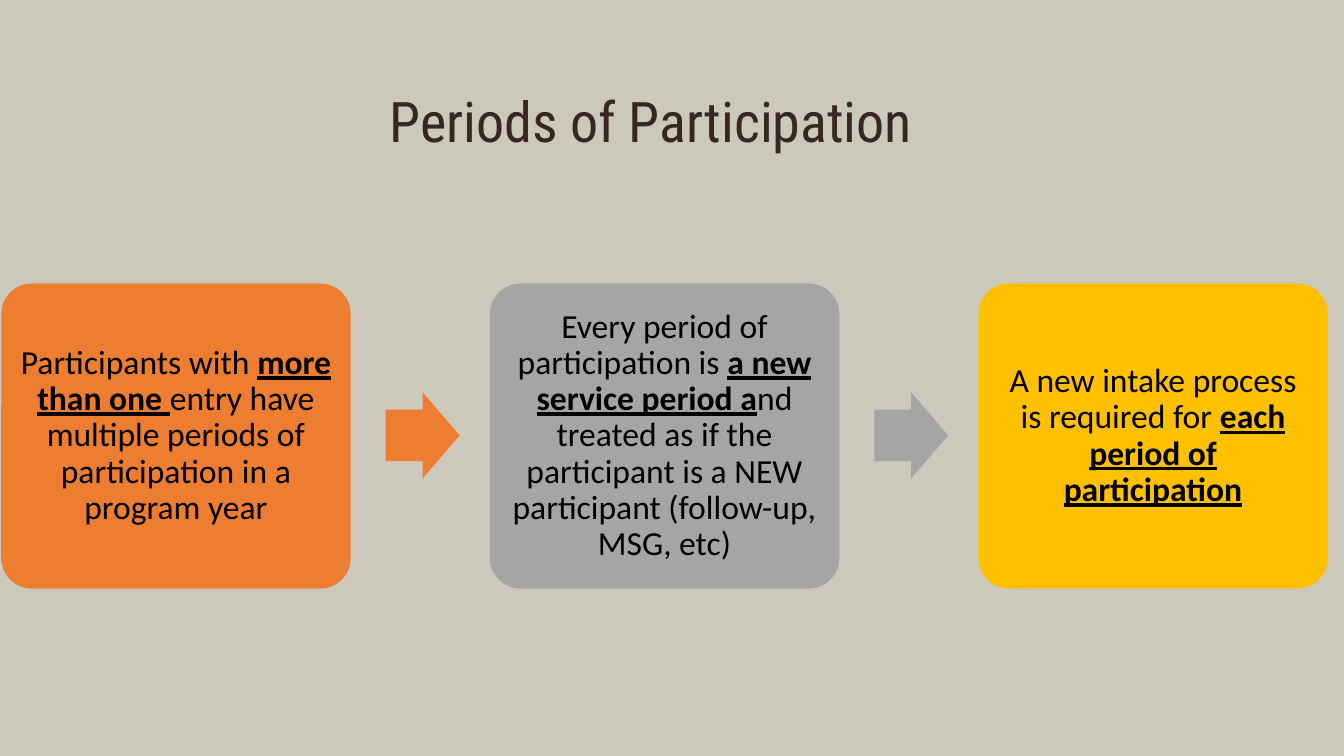
import pptx
import pptx.util
import pptx.dml.color
import pptx.enum.shapes
import pptx.enum.text

Inches = pptx.util.Inches
Pt = pptx.util.Pt
RGBColor = pptx.dml.color.RGBColor
MSO_SHAPE = pptx.enum.shapes.MSO_SHAPE
MSO_ANCHOR = pptx.enum.text.MSO_ANCHOR
PP_ALIGN = pptx.enum.text.PP_ALIGN

BACKGROUND = RGBColor(0xCC, 0xC8, 0xBC)
BROWN = RGBColor(0x38, 0x26, 0x20)
BLACK = RGBColor(0x00, 0x00, 0x00)
ORANGE = RGBColor(0xED, 0x7D, 0x31)
GRAY = RGBColor(0xA5, 0xA5, 0xA5)
GOLD = RGBColor(0xFF, 0xC0, 0x00)

# Each step: fill colour, then (text, emphasized) spans
STEPS = [
    (ORANGE, [("Participants with ", False),
              ("more than one ", True),
              ("entry have multiple periods of participation in a program year", False)]),
    (GRAY, [("Every period of participation is ", False),
            ("a new service period a", True),
            ("nd treated as if the participant is a NEW participant "
             "(follow-up, MSG, etc)", False)]),
    (GOLD, [("A new intake process is required for ", False),
            ("each period of participation", True)]),
]
FIRST_LEFT = 0.01
LAST_LEFT = 7.28
STEP_PITCH = (LAST_LEFT - FIRST_LEFT) / (len(STEPS) - 1)
ARROW_OFFSET = 2.86


def add_filled_shape(page, kind, left, top, width, height, color):
    shape = page.shapes.add_shape(
        kind, Inches(left), Inches(top), Inches(width), Inches(height))
    shape.shadow.inherit = False
    shape.fill.solid()
    shape.fill.fore_color.rgb = color
    shape.line.fill.background()
    return shape


def set_frame(frame, margin):
    """Wrap and middle-anchor the text, with one margin on all sides."""
    frame.word_wrap = True
    frame.vertical_anchor = MSO_ANCHOR.MIDDLE
    frame.margin_left = frame.margin_right = Inches(margin)
    frame.margin_top = frame.margin_bottom = Inches(margin)


deck = pptx.Presentation()
deck.slide_width = Inches(10)
deck.slide_height = Inches(10) * 9 // 16
page = deck.slides.add_slide(deck.slide_layouts.get_by_name("Title Only"))
page.background.fill.solid()
page.background.fill.fore_color.rgb = BACKGROUND

title = page.shapes.title
title.left, title.top = Inches(0.48), Inches(0.59)
title.width, title.height = Inches(8.73), Inches(0.6)
title.text_frame.text = "Periods of Participation"
set_frame(title.text_frame, 0.1)
para = title.text_frame.paragraphs[0]
para.alignment = PP_ALIGN.CENTER
font = para.runs[0].font
font.name = "Roboto Condensed"
font.size = Pt(30)
font.color.rgb = BROWN

for index, (color, spans) in enumerate(STEPS):
    left = FIRST_LEFT + index * STEP_PITCH
    box = add_filled_shape(
        page, MSO_SHAPE.ROUNDED_RECTANGLE, left, 2.11, 2.6, 2.27, color)
    box.adjustments[0] = 0.1
    set_frame(box.text_frame, 0.07)
    para = box.text_frame.paragraphs[0]
    para.alignment = PP_ALIGN.CENTER
    para.line_spacing = 0.9
    for text, emphasized in spans:
        span = para.add_run()
        span.text = text
        span.font.name = "Calibri"
        span.font.size = Pt(18)
        span.font.color.rgb = BLACK
        span.font.bold = emphasized
        span.font.underline = emphasized

    if index < len(STEPS) - 1:
        arrow = add_filled_shape(
            page, MSO_SHAPE.RIGHT_ARROW, left + ARROW_OFFSET, 2.92, 0.55, 0.64, color)
        arrow.adjustments[0] = 0.6
        arrow.adjustments[1] = 0.5

deck.save("out.pptx")
